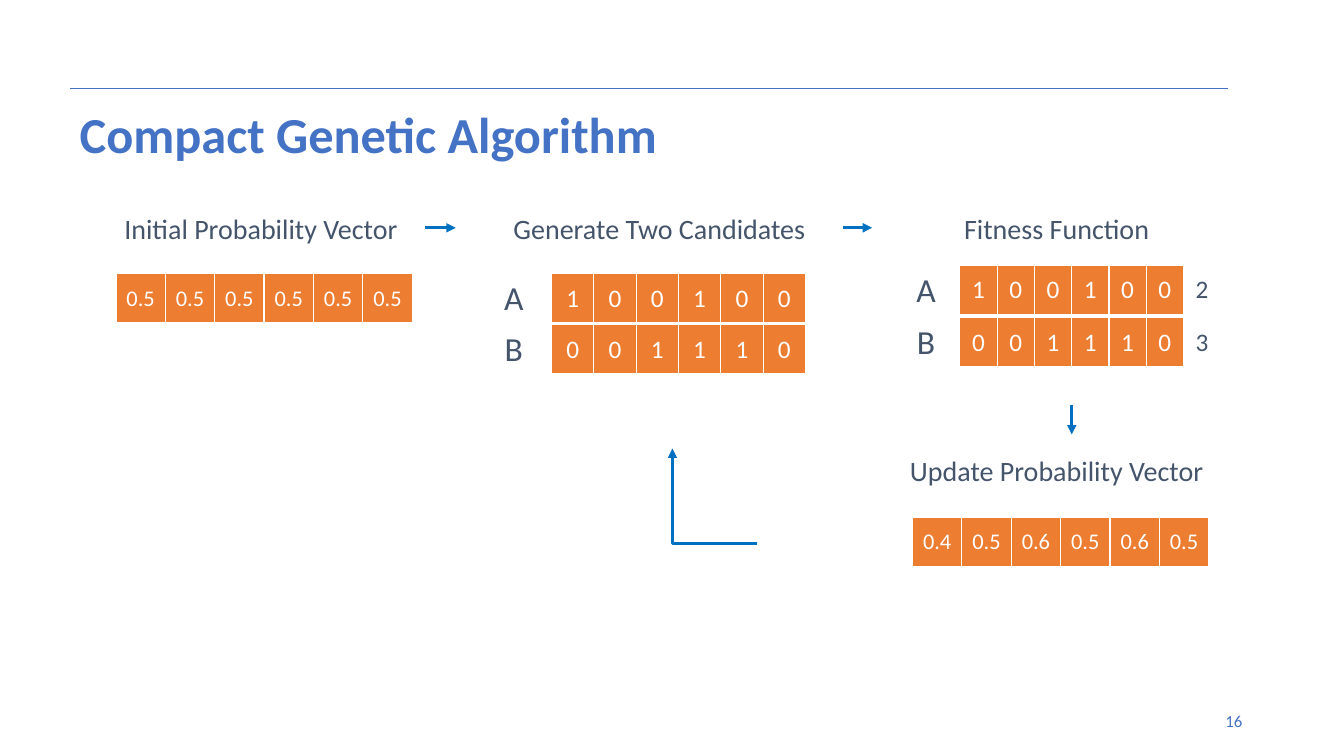
from pptx import Presentation
from pptx.dml.color import RGBColor
from pptx.enum.shapes import MSO_CONNECTOR as Connector
from pptx.enum.text import MSO_ANCHOR as Anchor, MSO_AUTO_SIZE as AutoSize, PP_ALIGN as Align
from pptx.oxml.ns import qn
from pptx.util import Inches, Pt
from lxml.etree import SubElement

TITLE = ("Compact Genetic Algorithm", (0.69, 1.04, 11.59, 0.55))
PAGE_NUMBER = ("16", (9.42, 6.95, 3, 0.4))
HEADINGS = [
    ("Initial Probability Vector", (0.96, 2.04, 3.26, 0.44)),
    ("Generate Two Candidates", (4.72, 2.04, 3.64, 0.44)),
    ("Fitness Function", (8.85, 2.04, 3.26, 0.44)),
    ("Update Probability Vector", (8.85, 4.45, 3.26, 0.44)),
]
VECTORS = [
    dict(at=(0.28, 2.71), label="", genes=["0.5"] * 6, score="", widths=(0.87, 0.49), size="probability"),
    dict(at=(4.72, 2.71), label="A", genes="100100", score="", widths=(0.75, 0.42), size="bit"),
    dict(at=(4.72, 3.22), label="B", genes="001110", score="", widths=(0.75, 0.42), size="bit"),
    dict(at=(8.85, 2.63), label="A", genes="100100", score="2", widths=(0.67, 0.37), size="bit"),
    dict(at=(8.85, 3.15), label="B", genes="001110", score="3", widths=(0.67, 0.37), size="bit"),
    dict(at=(8.17, 5.13), label="", genes="0.4 0.5 0.6 0.5 0.6 0.5".split(), score="",
         widths=(0.88, 0.49), size="probability"),
]
STEP_ARROWS = [(0, (4.22, 2.26), (4.52, 2.26)), (1, (8.36, 2.26), (8.65, 2.26))]
UPDATE_ARROW = ((10.63, 4.02), (10.63, 4.31))
LOOP_ARROW = ((7.51, 5.39), (6.67, 4.45))
RULE = ((0.69, 0.88), (12.18, 0.88))
ROW_HEIGHT = 0.5
BORDERS = {"a:lnL": 1, "a:lnR": 1, "a:lnT": 1, "a:lnB": 3}

THEME = dict(
    font="Calibri",
    colors=dict(accent="4472C4", text="44546A", gene="ED7D31", white="FFFFFF", arrow="0070C0"),
    sizes=dict(title=36, heading=20, label=24, bit=18, probability=16, number=12),
)


def color(name):
    """Return a theme colour."""
    return RGBColor.from_string(THEME["colors"][name])


def write(frame, text, size, color_name, align, bold=False):
    """Put one formatted paragraph in a text frame."""
    frame.text = text
    paragraph = frame.paragraphs[0]
    paragraph.alignment = align
    formats = dict(name=THEME["font"], size=Pt(THEME["sizes"][size]), bold=bold)
    for name, value in formats.items():
        setattr(paragraph.font, name, value)
    paragraph.font.color.rgb = color(color_name)
    return paragraph


def add_text(slide, text, box, size, color_name, align):
    """Add a wrapped, vertically centred text box."""
    shape = slide.shapes.add_textbox(*map(Inches, box))
    shape.text_frame.word_wrap = True
    shape.text_frame.vertical_anchor = Anchor.MIDDLE
    write(shape.text_frame, text, size, color_name, align)
    return shape


def add_line(slide, ends, color_name="arrow", width=2.25, arrow=True, kind=Connector.STRAIGHT):
    """Add a line, with an arrowhead at its end unless told otherwise."""
    start, end = ends
    connector = slide.shapes.add_connector(kind, *map(Inches, start + end))
    connector.line.color.rgb = color(color_name)
    connector.line.width = Pt(width)
    if arrow:
        SubElement(connector.line._get_or_add_ln(), qn("a:tailEnd"), type="triangle")
    SubElement(connector._element.spPr, qn("a:effectLst"))
    return connector


def add_border(cell):
    """Draw white borders round a table cell."""
    properties = cell._tc.get_or_add_tcPr()
    for tag, width in BORDERS.items():
        border = SubElement(properties, qn(tag), w=str(Pt(width)))
        fill = SubElement(border, qn("a:solidFill"))
        SubElement(fill, qn("a:srgbClr"), val=THEME["colors"]["white"])


def add_vector(slide, at, label, genes, score, widths, size):
    """Add a one-row table: label, genes and an optional score."""
    entries = [(label, "label", "text", False)]
    entries += [(gene, size, "white", True) for gene in genes]
    entries += [(score, size, "text", False)] if score else []
    label_width, gene_width = widths
    total = label_width + gene_width * (len(entries) - 1)
    table = slide.shapes.add_table(1, len(entries), *map(Inches, (*at, total, ROW_HEIGHT))).table
    table.first_row = table.horz_banding = False
    for index, (text, text_size, color_name, filled) in enumerate(entries):
        table.columns[index].width = Inches(gene_width if index else label_width)
        cell = table.cell(0, index)
        cell.margin_left = cell.margin_right = Inches(0.05)
        cell.vertical_anchor = Anchor.MIDDLE
        write(cell.text_frame, text, text_size, color_name, Align.CENTER)
        add_border(cell)
        if filled:
            cell.fill.solid()
            cell.fill.fore_color.rgb = color("gene")
        else:
            cell.fill.background()


def add_title(slide):
    """Place and format the title placeholder."""
    text, box = TITLE
    title = slide.shapes.title
    for name, value in zip(("left", "top", "width", "height"), box):
        setattr(title, name, Inches(value))
    formats = dict(vertical_anchor=Anchor.TOP, auto_size=AutoSize.NONE, word_wrap=True)
    for name, value in formats.items():
        setattr(title.text_frame, name, value)
    paragraph = write(title.text_frame, text, "title", "accent", Align.LEFT, bold=True)
    paragraph.line_spacing = 0.9


def main():
    """Build the slide and save it."""
    presentation = Presentation()
    presentation.slide_width, presentation.slide_height = Inches(13.33), Inches(7.5)
    slide = presentation.slides.add_slide(presentation.slide_layouts[5])
    add_line(slide, RULE, "accent", 0.5, arrow=False)
    add_title(slide)
    add_text(slide, *PAGE_NUMBER, "number", "accent", Align.RIGHT)
    headings = [add_text(slide, text, box, "heading", "text", Align.CENTER) for text, box in HEADINGS]
    for vector in VECTORS:
        add_vector(slide, **vector)
    for heading, start, end in STEP_ARROWS:
        add_line(slide, (start, end)).begin_connect(headings[heading], 3)
    add_line(slide, UPDATE_ARROW)
    loop = add_line(slide, LOOP_ARROW, kind=Connector.ELBOW)
    loop._element.spPr.find(qn("a:prstGeom")).set("prst", "bentConnector2")
    presentation.save("out.pptx")


if __name__ == "__main__":
    main()
